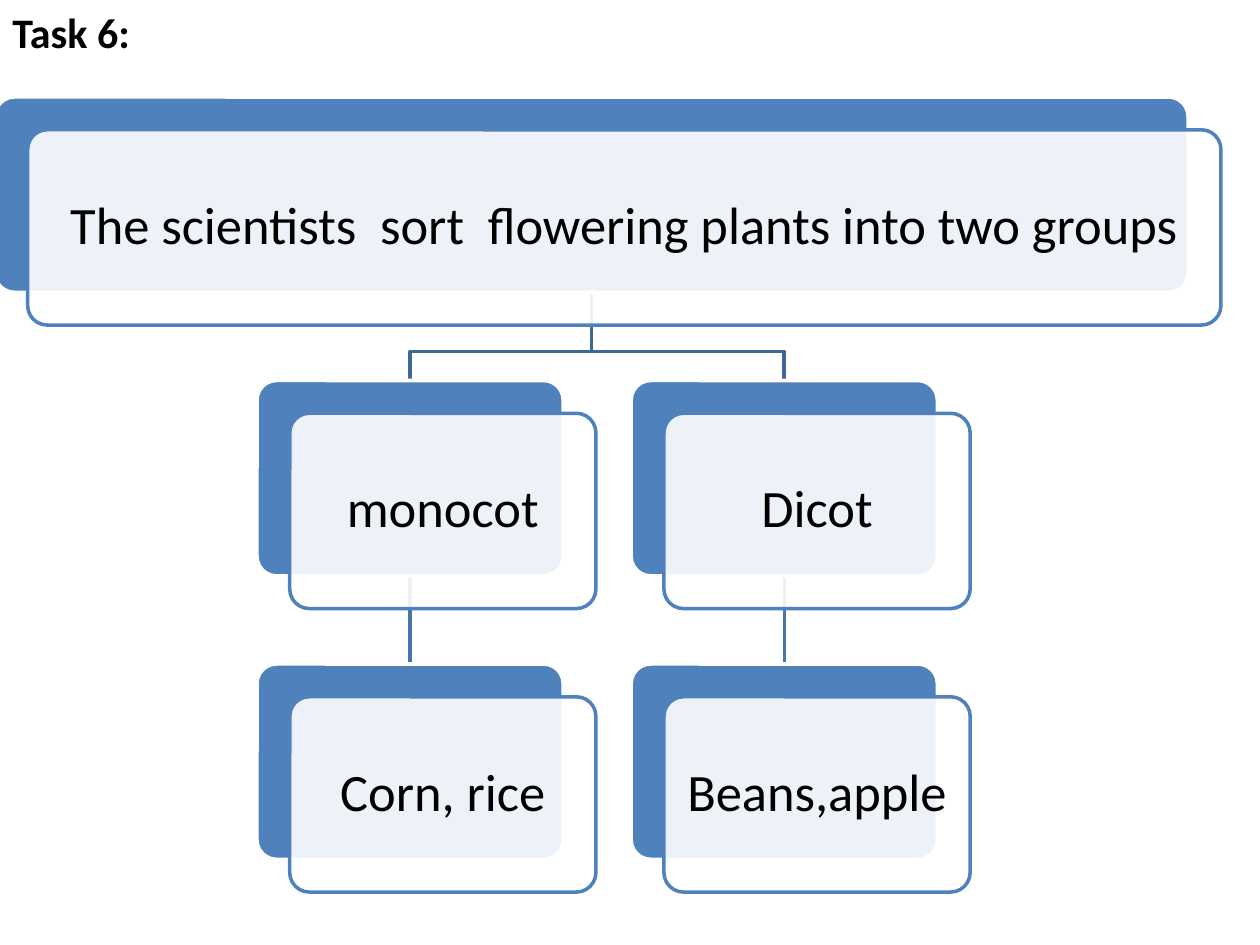
"""Build a slide with a tree that sorts flowering plants into two groups."""
from dataclasses import dataclass

from lxml.etree import SubElement
from pptx import Presentation
from pptx.dml.color import RGBColor as RGB
from pptx.enum.shapes import MSO_CONNECTOR as LINK, MSO_SHAPE as SHAPE
from pptx.enum.text import MSO_ANCHOR as ANCHOR, PP_ALIGN as ALIGN
from pptx.oxml.ns import qn
from pptx.util import Inches, Pt


@dataclass(frozen=True)
class Theme:
    blue: RGB = RGB(0x4F, 0x81, 0xBD)
    fork: RGB = RGB(0x3F, 0x67, 0x97)
    stem: RGB = RGB(0x48, 0x75, 0xAC)
    white: RGB = RGB(255, 255, 255)
    black: RGB = RGB(0, 0, 0)
    font: str = "Calibri"
    head: Pt = Pt(24)
    body: Pt = Pt(30)
    line: Pt = Pt(2)


theme = Theme()


def style(para, size, bold=False):
    font = para.runs[0].font
    font.name, font.size, font.bold = theme.font, size, bold
    font.color.rgb = theme.black


def add_card(left, top, width, fill, line):
    card = slide.shapes.add_shape(
        SHAPE.ROUNDED_RECTANGLE, Inches(left), Inches(top), Inches(width), Inches(high))
    card.adjustments[0] = 0.1
    card.shadow.inherit = False
    card.fill.solid()
    card.fill.fore_color.rgb = fill
    card.line.color.rgb = line
    card.line.width = theme.line
    return card


deck = Presentation()
deck.slide_width, deck.slide_height = Inches(10), Inches(7.5)
slide = deck.slides.add_slide(deck.slide_layouts[6])

title = slide.shapes.add_textbox(0, 0, Inches(10), Inches(0.6))
title.text_frame.word_wrap = True
title.text_frame.text = "Task 6:"
style(title.text_frame.paragraphs[0], theme.head, True)

high, wide, shift = 1.55, 2.43, 0.26
tops = [0.77, 3.02, 5.27]
root = (-0.04, 9.47, "The scientists  sort  flowering plants into two groups")
groups = [(2.04, ["monocot", "Corn, rice"]), (5.01, ["Dicot", "Beans,apple"])]
mid = root[0] + root[1] / 2
bend = 2.79

for left, names in groups:
    axis = left + wide / 2
    stem = slide.shapes.add_connector(
        LINK.STRAIGHT, Inches(axis), Inches(tops[1] + high), Inches(axis), Inches(tops[2]))
    stem.line.color.rgb = theme.stem
    stem.line.width = theme.line
    SubElement(stem.element.spPr, qn("a:effectLst"))

    spots = [(mid, tops[0] + high), (mid, bend), (axis, bend), (axis, tops[1])]
    start, *rest = [(Inches(x), Inches(y)) for x, y in spots]
    draft = slide.shapes.build_freeform(*start)
    draft.add_line_segments(rest, close=False)
    fork = draft.convert_to_shape()
    fork.shadow.inherit = False
    fork.fill.background()
    fork.line.color.rgb = theme.fork
    fork.line.width = theme.line

nodes = [(root[0], tops[0], root[1], root[2])]
for left, names in groups:
    nodes += [(left, top, wide, name) for top, name in zip(tops[1:], names)]

for left, top, width, name in nodes:
    add_card(left, top, width, theme.blue, theme.white)
    panel = add_card(left + shift, top + shift, width, theme.white, theme.blue)
    tint = panel.fill._xPr.find(qn("a:solidFill"))[0]
    SubElement(tint, qn("a:alpha"), val="90000")
    frame = panel.text_frame
    frame.word_wrap = True
    frame.vertical_anchor = ANCHOR.MIDDLE
    frame.margin_left = frame.margin_right = Inches(0.1)
    frame.text = name
    para = frame.paragraphs[0]
    para.alignment = ALIGN.CENTER
    para.line_spacing = 0.9
    style(para, theme.body)

deck.save("out.pptx")
